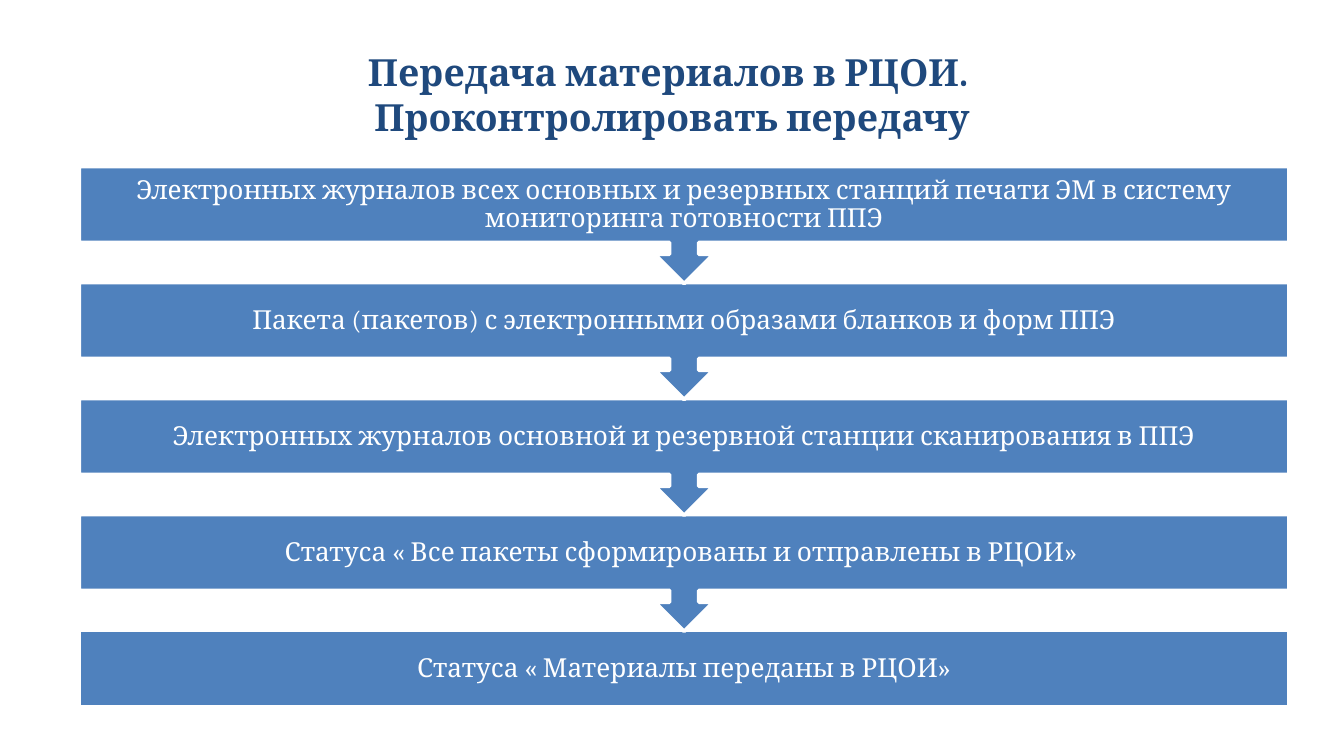
"""Build the slide on handing exam materials over to the processing centre."""
from pptx import Presentation
from pptx import util as u
from pptx.dml.color import RGBColor
from pptx.enum import shapes, text

NAVY = RGBColor(0x1F, 0x49, 0x7D)
BLUE = RGBColor(0x4F, 0x81, 0xBD)
WHITE = RGBColor(0xFF, 0xFF, 0xFF)

HEADING = "Передача материалов в РЦОИ. \vПроконтролировать передачу"
STEPS = [
    "Электронных журналов всех основных и резервных станций печати ЭМ "
    "в систему мониторинга готовности ППЭ",
    "Пакета (пакетов) с электронными образами бланков и форм ППЭ",
    "Электронных журналов основной и резервной станции сканирования в ППЭ",
    "Статуса « Все пакеты сформированы и отправлены в РЦОИ» ",
    "Статуса « Материалы переданы в РЦОИ»",
]
LEFT, WIDTH = 0.59, 9
FIRST_TOP, LAST_TOP = 1.24, 4.69
PITCH = (LAST_TOP - FIRST_TOP) / (len(STEPS) - 1)
STEP_HEIGHT, CALLOUT_HEIGHT = 0.57, 0.87


def write(frame, wording, *, size, color, bold=False, spacing=None, inset=None):
    """Fill a text frame with one centred, formatted paragraph."""
    frame.word_wrap = True
    frame.auto_size = text.MSO_AUTO_SIZE.NONE
    frame.vertical_anchor = text.MSO_ANCHOR.MIDDLE
    if inset is not None:
        frame.margin_left = frame.margin_right = u.Inches(inset)
        frame.margin_top = frame.margin_bottom = u.Inches(inset)
    paragraph = frame.paragraphs[0]
    paragraph.text = wording
    paragraph.alignment = text.PP_ALIGN.CENTER
    paragraph.line_spacing = spacing
    for run in paragraph.runs:
        run.font.name = "Cambria"
        run.font.size = u.Pt(size)
        run.font.bold = bold
        run.font.color.rgb = color


class FlowSlide:
    """Hold the flow style and the current slide."""

    def __init__(self, slide, fill=BLUE, outline=WHITE):
        """Keep the slide and its block colours."""
        self.slide = slide
        self.fill = fill
        self.outline = outline

    def title(self, wording):
        """Place and format the title placeholder."""
        heading = self.slide.shapes.title
        heading.left, heading.top = u.Inches(0.5), u.Inches(0.23)
        heading.width, heading.height = u.Inches(9), u.Inches(0.94)
        write(heading.text_frame, wording, size=20, color=NAVY, bold=True)

    def block(self, kind, top, height, rotation=0):
        """Draw a step's background block."""
        block = self.slide.shapes.add_shape(
            kind, u.Inches(LEFT), u.Inches(top), u.Inches(WIDTH), u.Inches(height))
        block.rotation = rotation
        block.shadow.inherit = False
        block.fill.solid()
        block.fill.fore_color.rgb = self.fill
        block.line.color.rgb = self.outline
        block.line.width = u.Pt(2)

    def label(self, wording, top):
        """Write a step's wording over its block."""
        label = self.slide.shapes.add_textbox(
            u.Inches(LEFT), u.Inches(top), u.Inches(WIDTH), u.Inches(STEP_HEIGHT))
        write(label.text_frame, wording, size=14, color=WHITE,
              spacing=0.9, inset=0.11)

    def step(self, wording, top, is_last):
        """Draw one step, with an arrow to the next unless it is the last."""
        if is_last:
            self.block(shapes.MSO_SHAPE.RECTANGLE, top, STEP_HEIGHT)
        else:
            self.block(shapes.MSO_SHAPE.UP_ARROW_CALLOUT, top, CALLOUT_HEIGHT, 180)
        self.label(wording, top)


def main():
    """Create and save the presentation."""
    deck = Presentation()
    deck.slide_width = u.Inches(10)
    deck.slide_height = u.Inches(10 * 9 / 16)
    flow = FlowSlide(deck.slides.add_slide(deck.slide_layouts[5]))
    flow.title(HEADING)
    last = len(STEPS) - 1
    for index in range(last, -1, -1):
        flow.step(STEPS[index], FIRST_TOP + index * PITCH, index == last)
    deck.save("out.pptx")


if __name__ == "__main__":
    main()
